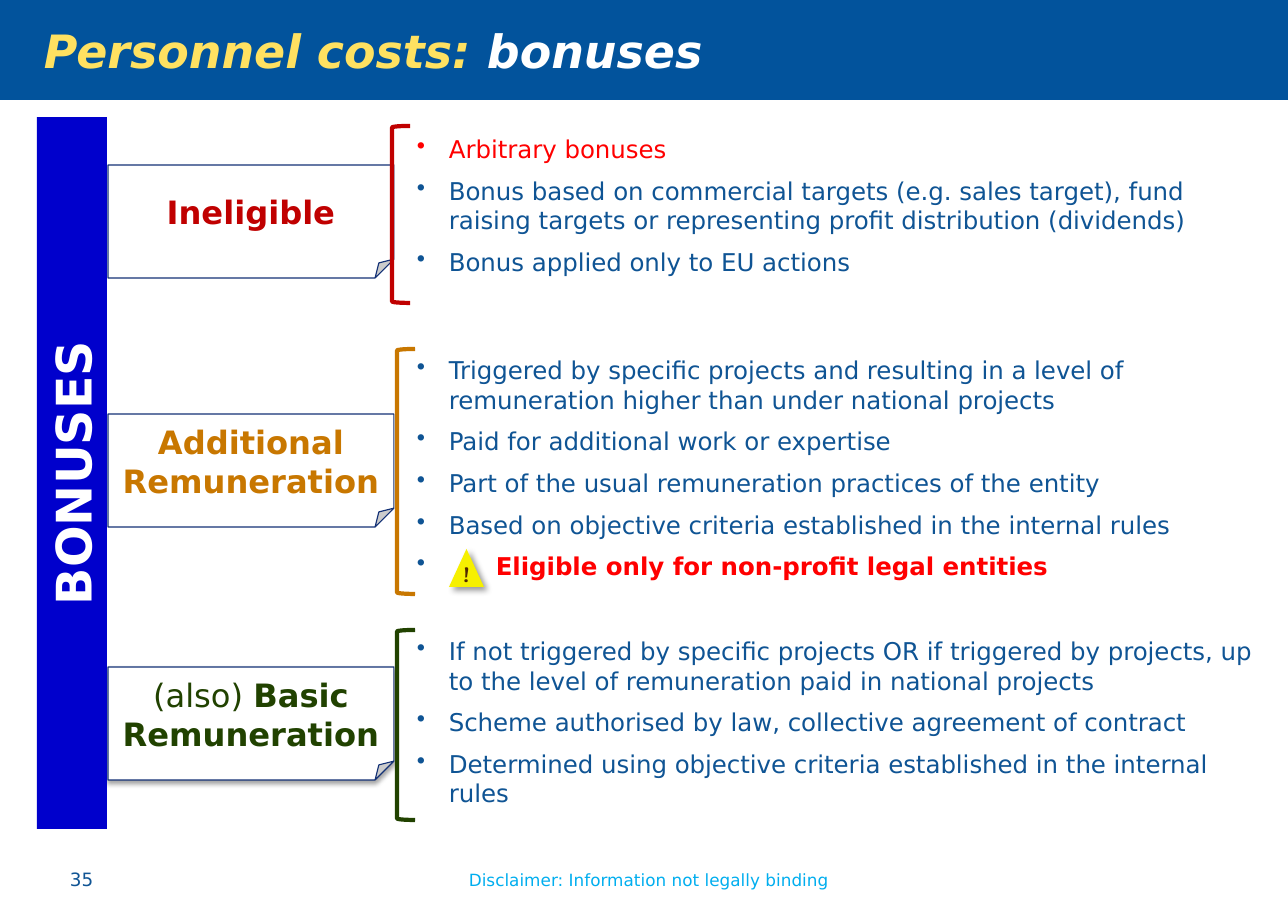
from dataclasses import dataclass

from lxml import etree
from pptx import Presentation, util as u
from pptx.dml.color import RGBColor
from pptx.enum import shapes, text
from pptx.oxml import ns


@dataclass(frozen=True)
class Theme:
    font: str = "DejaVu Sans"
    sign_font: str = "Cambria"
    band: str = "02539C"
    bar: str = "0000CC"
    body: str = "0F5494"
    outline: str = "133176"
    footer: str = "00AEEF"
    yellow: str = "FFE161"
    white: str = "FFFFFF"
    alert: str = "FF0000"
    red: str = "C00000"
    amber: str = "C87700"
    green: str = "214200"
    sign: str = "F6F000"
    sign_mark: str = "502800"
    title_size: int = 30
    bar_size: int = 32
    label_size: int = 21
    body_size: int = 16
    sign_size: int = 14
    number_size: int = 12
    footer_size: int = 11


THEME = Theme()
PX = 8298
SLIDE = (1288, 911)
INDENT = 32
WARNING_INDENT = 79
LIST_LEFT = 406
NOTE = {"left": 108, "width": 286, "height": 113}
BRACKET_WIDTH = 18

TITLE = [("Personnel costs: ", THEME.yellow), ("bonuses", THEME.white)]
BAR_TEXT = "BONUSES"
PAGE_NUMBER = "35"
DISCLAIMER = "Disclaimer: Information not legally binding"

GROUPS = [
    {
        "label": [("Ineligible", True)],
        "colour": THEME.red,
        "note_top": 165,
        "bracket": (392, 126, 177),
        "list": (129, 823, 160),
        "items": [
            ("Arbitrary bonuses", "alert"),
            ("Bonus based on commercial targets (e.g. sales target), fund raising targets "
             "or representing profit distribution (dividends)", "plain"),
            ("Bonus applied only to EU actions", "plain"),
        ],
    },
    {
        "label": [("Additional Remuneration", True)],
        "colour": THEME.amber,
        "note_top": 414,
        "bracket": (397, 349, 245),
        "list": (350, 838, 249),
        "items": [
            ("Triggered by specific projects and resulting in a level of remuneration "
             "higher than under national projects", "plain"),
            ("Paid for additional work or expertise", "plain"),
            ("Part of the usual remuneration practices of the entity", "plain"),
            ("Based on objective criteria established in the internal rules", "plain"),
            ("Eligible only for non-profit legal entities", "warning"),
        ],
    },
    {
        "label": [("(also) ", False), ("Basic Remuneration", True)],
        "colour": THEME.green,
        "note_top": 667,
        "bracket": (397, 630, 190),
        "list": (631, 875, 190),
        "items": [
            ("If not triggered by specific projects OR if triggered by projects, up to "
             "the level of remuneration paid in national projects", "plain"),
            ("Scheme authorised by law, collective agreement of contract", "plain"),
            ("Determined using objective criteria established in the internal rules", "plain"),
        ],
    },
]

ITEM_STYLES = {
    "plain": {"colour": THEME.body, "bullet": THEME.body, "indent": INDENT, "bold": False},
    "alert": {"colour": THEME.alert, "bullet": THEME.alert, "indent": INDENT, "bold": False},
    "warning": {"colour": THEME.alert, "bullet": THEME.body, "indent": WARNING_INDENT, "bold": True},
}


def apply(target, values):
    for name, value in values.items():
        setattr(target, name, value)


def place(*lengths):
    return [length * PX for length in lengths]


def add_run(paragraph, words, colour, size, **extra):
    run = paragraph.add_run()
    run.text = words
    apply(run.font, {"name": THEME.font, "size": u.Pt(size), **extra})
    run.font.color.rgb = RGBColor.from_string(colour)


def set_frame(shape, **extra):
    frame = shape.text_frame
    apply(frame, {"word_wrap": True, "vertical_anchor": text.MSO_ANCHOR.MIDDLE, **extra})
    return frame.paragraphs[0]


def add_shape(slide, kind, box, fill=None, line=None, line_width=0.75):
    shape = slide.shapes.add_shape(kind, *place(*box))
    shape.shadow.inherit = False
    if fill:
        shape.fill.solid()
        shape.fill.fore_color.rgb = RGBColor.from_string(fill)
    else:
        shape.fill.background()
    if line:
        shape.line.color.rgb = RGBColor.from_string(line)
        shape.line.width = u.Pt(line_width)
    else:
        shape.line.fill.background()
    return shape


def add_shadow(shape, blur, distance, angle, opacity):
    effects = shape._element.spPr.find(ns.qn("a:effectLst"))
    shadow = etree.SubElement(effects, ns.qn("a:outerShdw"), blurRad=str(u.Pt(blur)),
                              dist=str(u.Pt(distance)), dir=str(angle * 60000), rotWithShape="0")
    colour = etree.SubElement(shadow, ns.qn("a:srgbClr"), val="000000")
    etree.SubElement(colour, ns.qn("a:alpha"), val=str(opacity * 1000))


def add_bullet(paragraph, colour, indent):
    properties = paragraph._p.get_or_add_pPr()
    apply_indent = {"marL": indent * PX, "indent": -indent * PX}
    for name, value in apply_indent.items():
        properties.set(name, str(value))
    bullet_colour = etree.SubElement(properties, ns.qn("a:buClr"))
    etree.SubElement(bullet_colour, ns.qn("a:srgbClr"), val=colour)
    etree.SubElement(properties, ns.qn("a:buChar"), char="•")


def add_text(slide, box, words, colour, size, alignment):
    textbox = slide.shapes.add_textbox(*place(*box))
    paragraph = set_frame(textbox, vertical_anchor=text.MSO_ANCHOR.TOP)
    paragraph.alignment = alignment
    add_run(paragraph, words, colour, size)


def add_list(slide, box, items):
    textbox = slide.shapes.add_textbox(*place(*box))
    first = set_frame(textbox, vertical_anchor=text.MSO_ANCHOR.TOP)
    for index, (words, style_name) in enumerate(items):
        style = ITEM_STYLES[style_name]
        paragraph = textbox.text_frame.add_paragraph() if index else first
        add_bullet(paragraph, style["bullet"], style["indent"])
        if index:
            paragraph.space_before = u.Pt(8)
        add_run(paragraph, words, style["colour"], THEME.body_size, bold=style["bold"])


def add_group(slide, group):
    note = add_shape(slide, shapes.MSO_SHAPE.FOLDED_CORNER,
                     (NOTE["left"], group["note_top"], NOTE["width"], NOTE["height"]),
                     THEME.white, THEME.outline)
    paragraph = set_frame(note)
    paragraph.alignment = text.PP_ALIGN.CENTER
    for words, bold in group["label"]:
        add_run(paragraph, words, group["colour"], THEME.label_size, bold=bold)
    add_list(slide, (LIST_LEFT, *group["list"]), group["items"])
    left, top, height = group["bracket"]
    add_shape(slide, shapes.MSO_SHAPE.LEFT_BRACKET, (left, top, BRACKET_WIDTH, height),
              line=group["colour"], line_width=2.75)
    return note


def add_warning_sign(slide):
    sign = add_shape(slide, shapes.MSO_SHAPE.ISOSCELES_TRIANGLE, (449, 549, 35, 38), THEME.sign)
    add_shadow(sign, 4, 3, 45, 40)
    paragraph = set_frame(sign, word_wrap=False, margin_left=0, margin_right=0,
                          margin_top=0, margin_bottom=7 * PX)
    paragraph.alignment = text.PP_ALIGN.CENTER
    add_run(paragraph, "!", THEME.sign_mark, THEME.sign_size, name=THEME.sign_font, bold=True)


def main():
    presentation = Presentation()
    apply(presentation, dict(zip(("slide_width", "slide_height"), place(*SLIDE))))
    slide = presentation.slides.add_slide(presentation.slide_layouts[6])

    band = add_shape(slide, shapes.MSO_SHAPE.RECTANGLE, (0, 0, SLIDE[0], 100), THEME.band)
    paragraph = set_frame(band, margin_left=44 * PX)
    paragraph.alignment = text.PP_ALIGN.LEFT
    for words, colour in TITLE:
        add_run(paragraph, words, colour, THEME.title_size, bold=True, italic=True)

    notes = [add_group(slide, group) for group in GROUPS]
    add_shadow(notes[-1], 3, 2, 90, 35)
    add_warning_sign(slide)

    bar = add_shape(slide, shapes.MSO_SHAPE.RECTANGLE, (-284, 438, 712, 70), THEME.bar)
    bar.rotation = 270
    paragraph = set_frame(bar)
    paragraph.alignment = text.PP_ALIGN.CENTER
    add_run(paragraph, BAR_TEXT, THEME.white, THEME.bar_size, bold=True)

    add_text(slide, (59, 863, 90, 33), PAGE_NUMBER, THEME.body, THEME.number_size,
             text.PP_ALIGN.LEFT)
    add_text(slide, (445, 864, 408, 32), DISCLAIMER, THEME.footer, THEME.footer_size,
             text.PP_ALIGN.CENTER)
    presentation.save("out.pptx")


if __name__ == "__main__":
    main()
